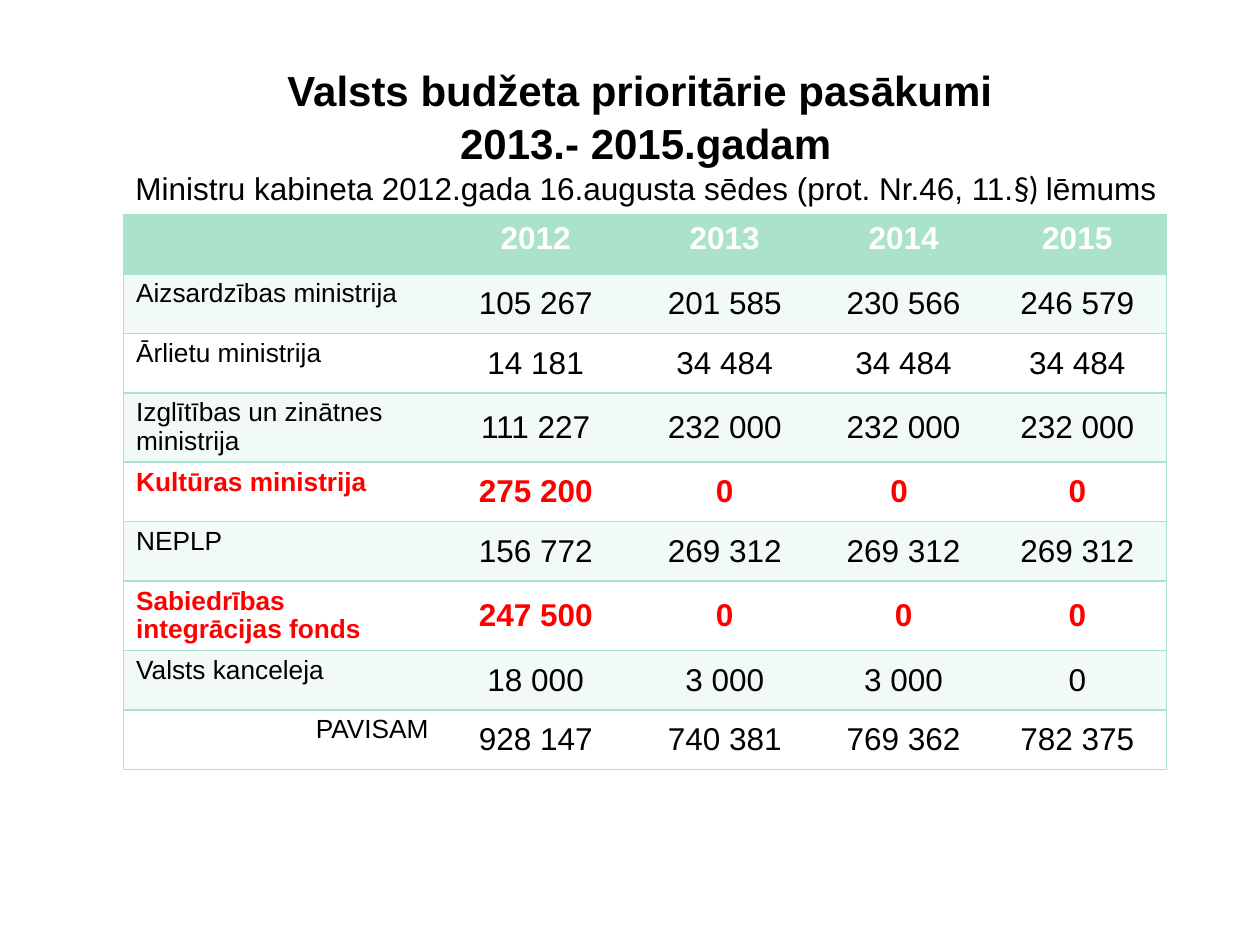
import pptx
import pptx.dml.color
import pptx.enum.text
import pptx.oxml
import pptx.oxml.ns
import pptx.util

Pt = pptx.util.Pt
RGBColor = pptx.dml.color.RGBColor
Align = pptx.enum.text.PP_ALIGN
Anchor = pptx.enum.text.MSO_ANCHOR

MINT = RGBColor(0xAA, 0xE2, 0xCA)
PALE = RGBColor(0xF1, 0xFA, 0xF6)
WHITE = RGBColor(0xFF, 0xFF, 0xFF)
BLACK = RGBColor(0, 0, 0)
RED = RGBColor(0xFF, 0, 0)

# Each heading line: size, bold, runs of (text, font)
HEADING = [
    (24, True, [("Valsts budžeta prioritārie pasākumi ", "Arial")]),
    (24, True, [("2013.- 2015.gadam", "Arial")]),
    (18, False, [("Ministru kabineta 2012.gada 16.augusta sēdes (prot. Nr.46, 11.", "Arial"),
                 ("§) ", "Lato"), ("lēmums", "Arial")]),
]
BUDGET = [
    ("", "2012", "2013", "2014", "2015"),
    ("Aizsardzības ministrija", "105 267", "201 585", "230 566", "246 579"),
    ("Ārlietu ministrija", "14 181", "34 484", "34 484", "34 484"),
    ("Izglītības un zinātnes ministrija", "111 227", "232 000", "232 000", "232 000"),
    ("Kultūras ministrija", "275 200", "0", "0 ", "0"),
    ("NEPLP", "156 772", "269 312", "269 312", "269 312"),
    ("Sabiedrības integrācijas fonds", "247 500", "0", "0", "0"),
    ("Valsts kanceleja", "18 000", "3 000", "3 000", "0"),
    ("PAVISAM", "928 147", "740 381", "769 362", "782 375"),
]
CUT_TO_ZERO = {"Kultūras ministrija", "Sabiedrības integrācijas fonds"}
COLUMN_WIDTHS = [181.5, 108, 108, 96.5, 102]
ROW_HEIGHT = 34
NO_STYLE = "{2D5ABB26-0587-4C30-8999-92F81FD0307C}"


def set_borders(cell, sides):
    """Draw 1 pt mint lines on the sides (in the order L, R, T, B)."""
    properties = cell._tc.get_or_add_tcPr()
    for index, side in enumerate(sides):
        properties.insert(index, pptx.oxml.parse_xml(
            f'<a:ln{side} {pptx.oxml.ns.nsdecls("a")} w="12700"><a:solidFill>'
            f'<a:srgbClr val="{MINT}"/></a:solidFill></a:ln{side}>'))


def add_heading(slide):
    frame = slide.shapes.add_textbox(Pt(65.5), Pt(31.7), Pt(607), Pt(87)).text_frame
    frame.word_wrap = True
    for number, (size, bold, runs) in enumerate(HEADING):
        line = frame.add_paragraph() if number else frame.paragraphs[0]
        line.alignment = Align.CENTER
        line.line_spacing = 1.05
        line.font.size = Pt(size)
        line.font.bold = bold
        line.font.color.rgb = BLACK
        for text, font in runs:
            run = line.add_run()
            run.text = text
            run.font.name = font


def fill_cell(cell, row, column):
    label = BUDGET[row][0]
    is_header, is_label = row == 0, column == 0
    cell.fill.solid()
    cell.fill.fore_color.rgb = MINT if is_header else PALE if row % 2 else WHITE
    left = ["L"] if is_label else []
    right = ["R"] if column == len(COLUMN_WIDTHS) - 1 else []
    set_borders(cell, left + right + ["T", "B"])
    cell.vertical_anchor = Anchor.TOP if is_header or is_label else Anchor.MIDDLE

    cell.text = BUDGET[row][column]
    entry = cell.text_frame.paragraphs[0]
    if not is_label:
        entry.alignment = Align.CENTER
    else:
        entry.alignment = Align.RIGHT if label == "PAVISAM" else Align.LEFT
        entry.line_spacing = 0.97
    entry.font.name = "Arial"
    entry.font.size = Pt(15 if is_label else 18)
    entry.font.bold = is_header or label in CUT_TO_ZERO
    entry.font.color.rgb = WHITE if is_header else RED if label in CUT_TO_ZERO else BLACK


def add_budget_table(slide):
    table = slide.shapes.add_table(
        len(BUDGET), len(COLUMN_WIDTHS), Pt(70.6), Pt(122.6),
        Pt(sum(COLUMN_WIDTHS)), Pt(ROW_HEIGHT * len(BUDGET))).table
    table._tbl.tblPr.find(pptx.oxml.ns.qn("a:tableStyleId")).text = NO_STYLE
    for column, width in zip(table.columns, COLUMN_WIDTHS):
        column.width = Pt(width)
    for row in range(len(BUDGET)):
        table.rows[row].height = Pt(ROW_HEIGHT)
        for column in range(len(COLUMN_WIDTHS)):
            fill_cell(table.cell(row, column), row, column)


def main():
    deck = pptx.Presentation()
    deck.slide_width, deck.slide_height = Pt(720), Pt(540)
    slide = deck.slides.add_slide(deck.slide_layouts[6])
    add_budget_table(slide)
    add_heading(slide)
    deck.save("out.pptx")


if __name__ == "__main__":
    main()
